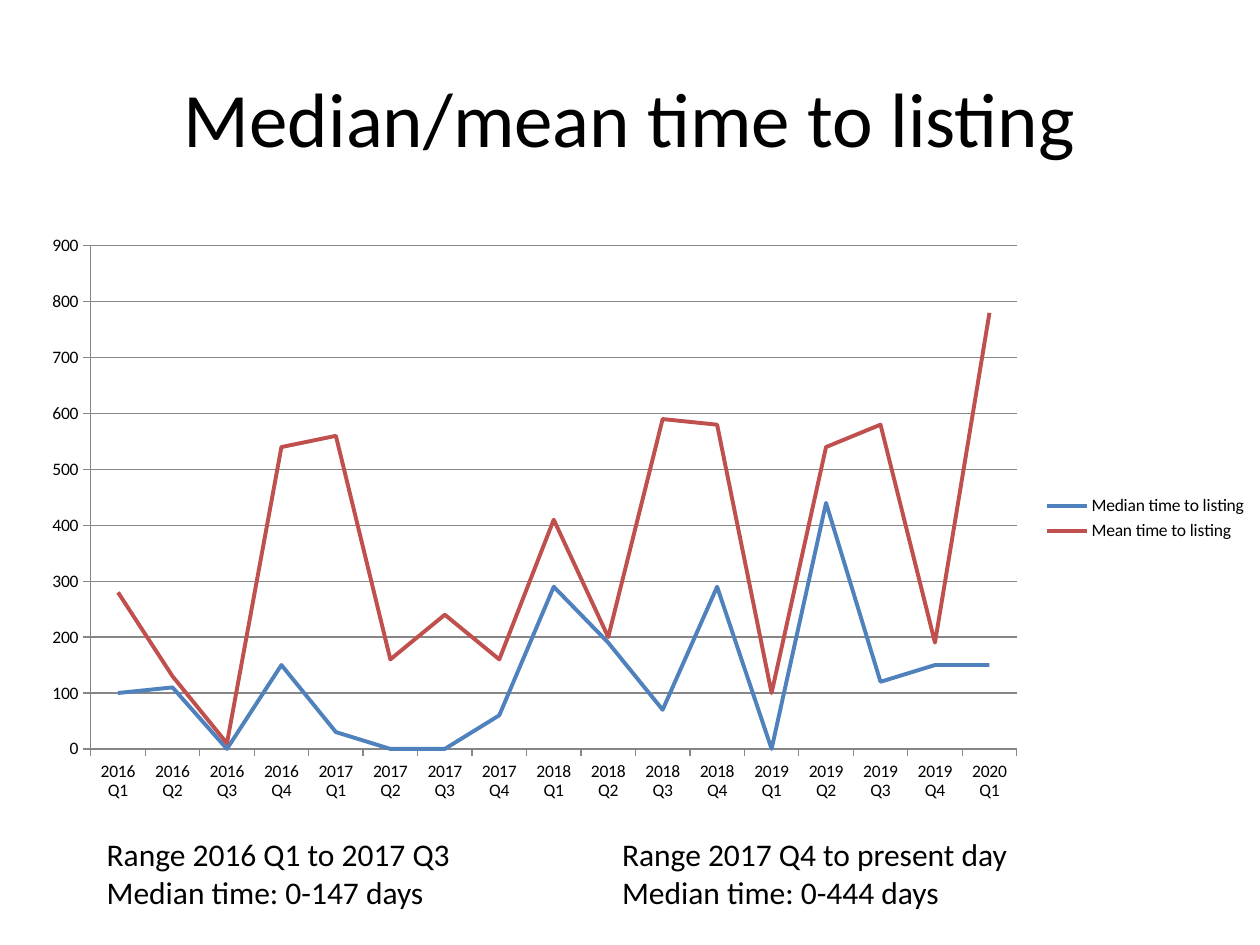
from dataclasses import dataclass

from pptx import Presentation
from pptx.chart.data import CategoryChartData
from pptx.dml.color import RGBColor
from pptx.enum.chart import XL_CHART_TYPE, XL_LEGEND_POSITION, XL_MARKER_STYLE, XL_TICK_MARK
from pptx.enum.text import MSO_ANCHOR, PP_ALIGN
from pptx.util import Cm, Pt

LINE = XL_CHART_TYPE.LINE
LEGEND_RIGHT = XL_LEGEND_POSITION.RIGHT
NO_MARKER = XL_MARKER_STYLE.NONE
TICK_OUTSIDE = XL_TICK_MARK.OUTSIDE
MIDDLE, TOP = MSO_ANCHOR.MIDDLE, MSO_ANCHOR.TOP
CENTER, LEFT = PP_ALIGN.CENTER, PP_ALIGN.LEFT

FONT = "Calibri"
BLACK = "000000"
GRID_GREY = "868686"


@dataclass
class Caption:
    left: float
    top: float
    width: float
    height: float
    lines: list[str]
    size: int
    align: PP_ALIGN = LEFT
    anchor: MSO_ANCHOR = TOP
    wrap: bool = False


@dataclass
class Measure:
    name: str
    color: str
    days: list[int]


CAPTIONS = [
    Caption(1.27, 0.76, 22.86, 3.18, ["Median/mean time to listing"], 44, CENTER, MIDDLE, True),
    Caption(1.9, 16.71, 7.52, 1.8,
            ["Range 2016 Q1 to 2017 Q3", "Median time: 0-147 days"], 18),
    Caption(12.29, 16.71, 8.38, 1.8,
            ["Range 2017 Q4 to present day", "Median time: 0-444 days"], 18),
]
QUARTERS = [f"{2016 + i // 4} Q{i % 4 + 1}" for i in range(17)]
MEASURES = [
    Measure("Median time to listing", "4F81BD",
            [100, 110, 0, 150, 30, 0, 0, 60, 290, 190, 70, 290, 0, 440, 120, 150, 150]),
    Measure("Mean time to listing", "C0504D",
            [280, 130, 10, 540, 560, 160, 240, 160, 410, 200, 590, 580, 100, 540, 580, 190, 780]),
]


def rgb(color: str) -> RGBColor:
    return RGBColor.from_string(color)


def style_font(font, size: int) -> None:
    font.name = FONT
    font.size = Pt(size)
    font.color.rgb = rgb(BLACK)


def style_line(line, color: str, width: float) -> None:
    line.color.rgb = rgb(color)
    line.width = Pt(width)


def add_caption(slide, caption: Caption) -> None:
    box = slide.shapes.add_textbox(
        Cm(caption.left), Cm(caption.top), Cm(caption.width), Cm(caption.height))
    frame = box.text_frame
    frame.word_wrap = caption.wrap
    frame.vertical_anchor = caption.anchor
    frame.text = "\n".join(caption.lines)
    for paragraph in frame.paragraphs:
        paragraph.alignment = caption.align
        style_font(paragraph.font, caption.size)


def add_listing_chart(slide) -> None:
    data = CategoryChartData()
    data.categories = QUARTERS
    for measure in MEASURES:
        data.add_series(measure.name, measure.days)
    chart = slide.shapes.add_chart(
        LINE, Cm(0.56), Cm(4.52), Cm(24.84), Cm(11.86), data).chart
    style_font(chart.font, 10)
    chart.has_title = False
    chart.has_legend = True
    chart.legend.position = LEGEND_RIGHT
    chart.legend.include_in_layout = False

    for axis in (chart.category_axis, chart.value_axis):
        axis.major_tick_mark = TICK_OUTSIDE
        style_line(axis.format.line, GRID_GREY, 0.75)
    days_axis = chart.value_axis
    days_axis.minimum_scale, days_axis.maximum_scale, days_axis.major_unit = 0, 900, 100
    style_line(days_axis.major_gridlines.format.line, GRID_GREY, 0.75)

    for series, measure in zip(chart.plots[0].series, MEASURES):
        series.smooth = False
        series.marker.style = NO_MARKER
        style_line(series.format.line, measure.color, 2.25)


def main() -> None:
    deck = Presentation()
    deck.slide_width, deck.slide_height = Cm(25.4), Cm(19.05)
    slide = deck.slides.add_slide(deck.slide_layouts[6])
    add_listing_chart(slide)
    for caption in CAPTIONS:
        add_caption(slide, caption)
    deck.save("out.pptx")


if __name__ == "__main__":
    main()
